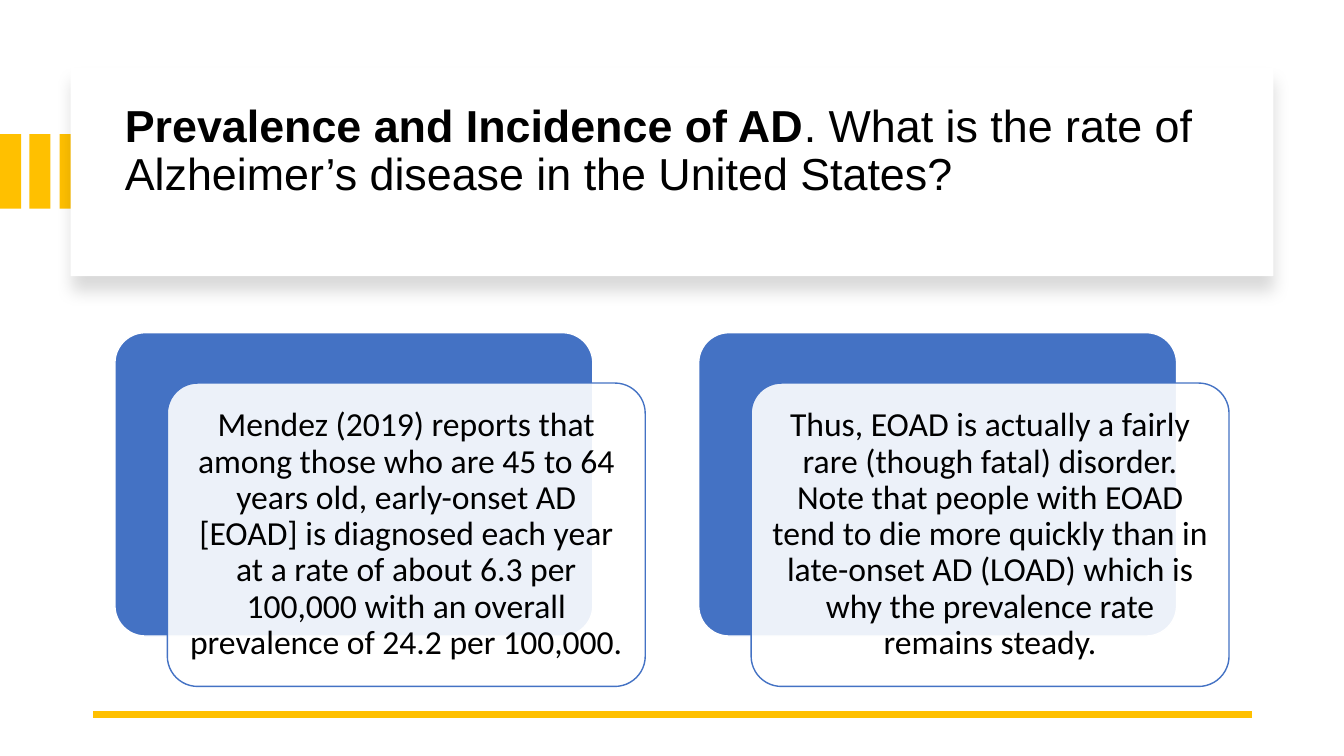
from typing import NamedTuple

from lxml import etree
from pptx import Presentation, util as u
from pptx.dml.color import RGBColor
from pptx.enum import shapes, text
from pptx.oxml import ns

COLORS = {"gold": "FFC000", "blue": "4472C4", "white": "FFFFFF", "black": "000000"}
RECT = shapes.MSO_SHAPE.RECTANGLE
ROUNDED = shapes.MSO_SHAPE.ROUNDED_RECTANGLE


class Box(NamedTuple):
    left: float
    top: float
    width: float
    height: float

    def inches(self) -> list:
        return [u.Inches(v) for v in self]


class Run(NamedTuple):
    text: str
    bold: bool = False


class Card(NamedTuple):
    left: float
    text: str


STRIPES = [Box(left, 1.33, 0.21, 0.74) for left in (0, 0.29, 0.59)]
TITLE_PANEL = Box(0.7, 0.67, 11.93, 2.07)
TITLE_BOX = Box(1.14, 0.89, 11.13, 1.7)
TITLE = [
    Run("Prevalence and Incidence of AD", bold=True),
    Run(". What is the rate of Alzheimer’s disease in the United States?"),
]
CARD_TOP, CARD_WIDTH, CARD_HEIGHT = 3.3, 4.74, 3.01
FRONT_DX, FRONT_DY, TEXT_MARGIN = 0.52, 0.5, 0.09
CARDS = [
    Card(1.14, "Mendez (2019) reports that among those who are 45 to 64 years old, "
               "early-onset AD [EOAD] is diagnosed each year at a rate of about 6.3 per "
               "100,000 with an overall prevalence of 24.2 per 100,000."),
    Card(6.93, "Thus, EOAD is actually a fairly rare (though fatal) disorder. Note that "
               "people with EOAD tend to die more quickly than in late-onset AD (LOAD) "
               "which is why the prevalence rate remains steady."),
]


def rgb(name: str) -> RGBColor:
    return RGBColor.from_string(COLORS[name])


def add_child(parent, tag: str, **attrs: str):
    return etree.SubElement(parent, ns.qn(tag), attrs)


def add_block(slide, kind, box: Box, fill: str, line: str = ""):
    sp = slide.shapes.add_shape(kind, *box.inches())
    sp.shadow.inherit = False
    sp.fill.solid()
    sp.fill.fore_color.rgb = rgb(fill)
    if line:
        sp.line.color.rgb = rgb(line)
        sp.line.width = u.Pt(1)
    else:
        sp.line.fill.background()
    if kind == ROUNDED:
        sp.adjustments[0] = 0.1
    return sp


def add_drop_shadow(sp) -> None:
    effects = sp._element.spPr.find(ns.qn("a:effectLst"))
    shadow = add_child(effects, "a:outerShdw", blurRad=str(u.Pt(11)), dist=str(u.Pt(10)),
                       dir="5400000", algn="t", rotWithShape="0")
    color = add_child(shadow, "a:srgbClr", val=COLORS["black"])
    add_child(color, "a:alpha", val="15000")


def set_opacity(sp, percent: int) -> None:
    color = sp._element.spPr.find(ns.qn("a:solidFill"))[0]
    add_child(color, "a:alpha", val=str(percent * 1000))


def add_text(slide, box: Box, runs: list[Run], font: str, size: int, align):
    """Add a vertically centred one-paragraph text box and return its frame."""
    tf = slide.shapes.add_textbox(*box.inches()).text_frame
    tf.word_wrap = True
    tf.vertical_anchor = text.MSO_ANCHOR.MIDDLE
    p = tf.paragraphs[0]
    p.alignment = align
    p.line_spacing = 0.9
    for run in runs:
        r = p.add_run()
        r.text = run.text
        r.font.name = font
        r.font.size = u.Pt(size)
        r.font.bold = run.bold
        r.font.color.rgb = rgb("black")
    return tf


def add_title(slide) -> None:
    add_drop_shadow(add_block(slide, RECT, TITLE_PANEL, "white"))
    tf = add_text(slide, TITLE_BOX, TITLE, "Arial", 32, text.PP_ALIGN.LEFT)
    tf.margin_bottom = u.Inches(0.51)


def add_rule(slide) -> None:
    rule = slide.shapes.add_connector(
        shapes.MSO_CONNECTOR.STRAIGHT,
        u.Inches(12.42), u.Inches(7.09), u.Inches(0.92), u.Inches(7.09))
    rule.line.color.rgb = rgb("gold")
    rule.line.width = u.Pt(4.5)
    add_child(rule._element.spPr, "a:effectLst")


def add_card(slide, card: Card) -> None:
    back = Box(card.left, CARD_TOP, CARD_WIDTH, CARD_HEIGHT)
    front = back._replace(left=back.left + FRONT_DX, top=back.top + FRONT_DY)
    label = Box(front.left + TEXT_MARGIN, front.top + TEXT_MARGIN,
                front.width - 2 * TEXT_MARGIN, front.height - 2 * TEXT_MARGIN)
    add_block(slide, ROUNDED, back, "blue", "white")
    set_opacity(add_block(slide, ROUNDED, front, "white", "blue"), 90)
    tf = add_text(slide, label, [Run(card.text)], "Calibri", 24, text.PP_ALIGN.CENTER)
    tf.margin_left = tf.margin_right = u.Inches(0.1)
    tf.margin_top = tf.margin_bottom = u.Inches(0.1)


def main() -> None:
    prs = Presentation()
    prs.slide_width, prs.slide_height = u.Inches(13.33), u.Inches(7.5)
    slide = prs.slides.add_slide(prs.slide_layouts[6])
    for stripe in STRIPES:
        add_block(slide, RECT, stripe, "gold")
    add_title(slide)
    add_rule(slide)
    for card in CARDS:
        add_card(slide, card)
    prs.save("out.pptx")


if __name__ == "__main__":
    main()
